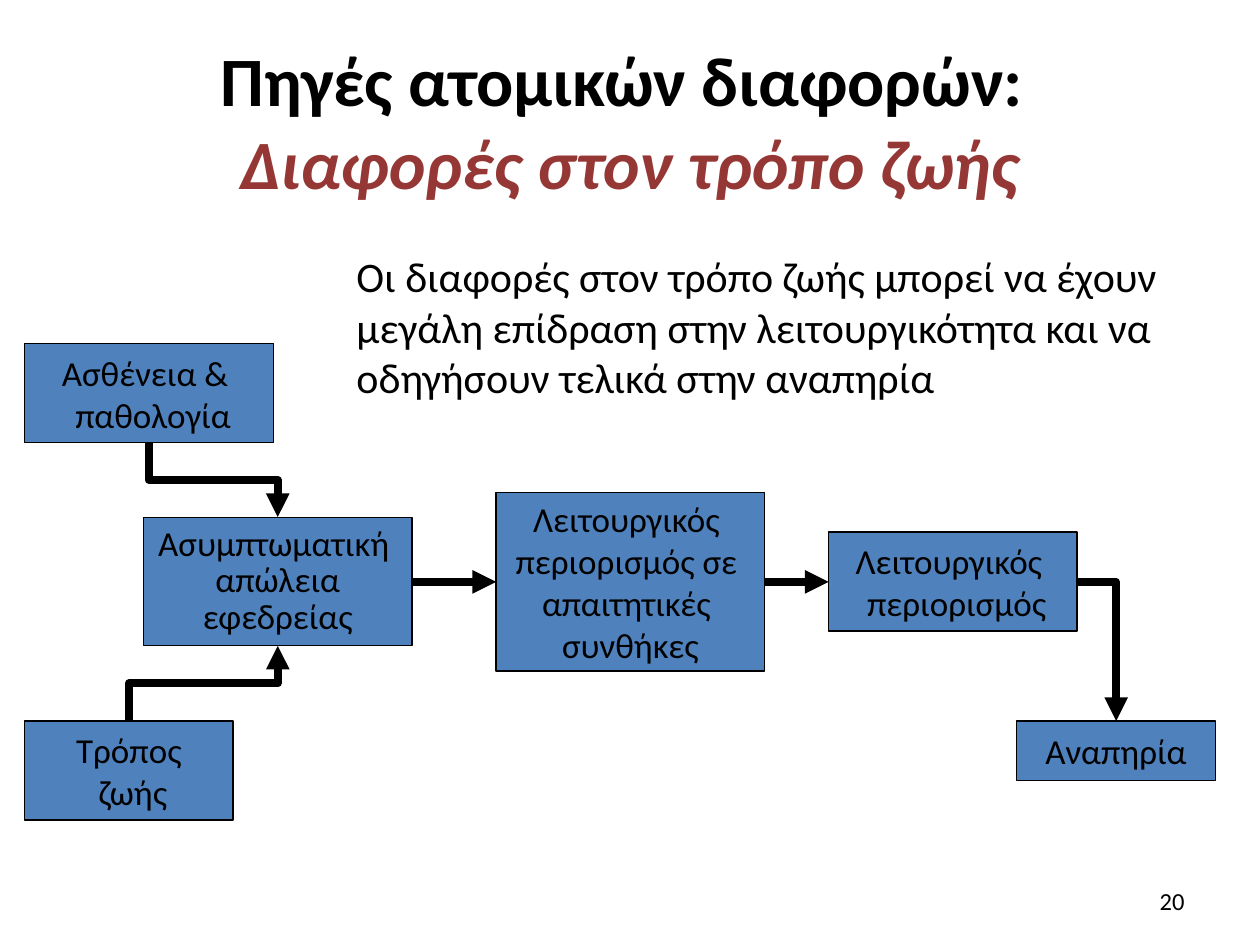
from lxml import etree
from pptx import Presentation
from pptx.dml.color import RGBColor
from pptx.enum import shapes, text
from pptx.oxml.ns import qn
from pptx.util import Pt

BLACK = RGBColor(0x00, 0x00, 0x00)
RED = RGBColor(0x95, 0x37, 0x35)
BLUE = RGBColor(0x4F, 0x81, 0xBD)
FONT = "Calibri"
CENTER = text.PP_ALIGN.CENTER
FLOW_Y = 332.5


def add_text(p, content, size=20, color=BLACK, bold=False, italic=False,
             align=CENTER, spacing=None):
    """Append text to a paragraph, with line feeds as line breaks."""
    for i, line in enumerate(content.split("\n")):
        if i:
            p.add_line_break()
        r = p.add_run()
        r.text = line
        f = r.font
        f.name, f.size, f.bold, f.italic = FONT, Pt(size), bold, italic
        f.color.rgb = color
    p.alignment = align
    if spacing:
        p.line_spacing = Pt(spacing)


def place(sp, left, top, width, height):
    """Set the position and size of a shape."""
    sp.left, sp.top, sp.width, sp.height = map(Pt, (left, top, width, height))


def add_title(sp):
    """Fill the title placeholder with its two lines."""
    place(sp, 36, 21.6, 648, 112.3)
    tf = sp.text_frame
    tf.auto_size = text.MSO_AUTO_SIZE.NONE
    tf.vertical_anchor = text.MSO_ANCHOR.MIDDLE
    tf.margin_bottom = Pt(22)
    p = tf.paragraphs[0]
    add_text(p, "Πηγές ατομικών διαφορών: ", size=39.6, bold=True)
    p.add_line_break()
    add_text(p, "Διαφορές στον τρόπο ζωής", size=39.6, color=RED, bold=True, italic=True)


def add_body(sp):
    """Fill the body placeholder with an indented, unbulleted paragraph."""
    place(sp, 48, 139.7, 648, 350.6)
    tf = sp.text_frame
    tf.auto_size = text.MSO_AUTO_SIZE.NONE
    p = tf.paragraphs[0]
    pPr = p._p.get_or_add_pPr()
    pPr.set("marL", str(Pt(148.5)))
    pPr.set("indent", "0")
    etree.SubElement(pPr, qn("a:buNone"))
    p.space_before = Pt(0)
    add_text(p, "Οι διαφορές στον τρόπο ζωής μπορεί να έχουν μεγάλη επίδραση στην "
                "λειτουργικότητα και να οδηγήσουν τελικά στην αναπηρία",
             size=24, align=text.PP_ALIGN.LEFT)


def add_number(slide, number):
    """Add the slide number at the bottom right."""
    sp = slide.shapes.add_textbox(Pt(516), Pt(500.5), Pt(168), Pt(28.8))
    tf = sp.text_frame
    tf.word_wrap = True
    tf.vertical_anchor = text.MSO_ANCHOR.MIDDLE
    add_text(tf.paragraphs[0], number, size=14, align=text.PP_ALIGN.RIGHT)


def add_box(slide, content, left, top, width, height, spacing=None):
    """Add a blue box with centred text."""
    sp = slide.shapes.add_shape(shapes.MSO_SHAPE.RECTANGLE, Pt(left), Pt(top),
                                Pt(width), Pt(height))
    sp.shadow.inherit = False
    sp.fill.solid()
    sp.fill.fore_color.rgb = BLUE
    sp.line.color.rgb = BLACK
    sp.line.width = Pt(0.75)
    tf = sp.text_frame
    tf.word_wrap = False
    tf.vertical_anchor = text.MSO_ANCHOR.MIDDLE
    add_text(tf.paragraphs[0], content, spacing=spacing)


def add_arrow(slide, x1, y1, x2, y2, kind=shapes.MSO_CONNECTOR.STRAIGHT):
    """Add a thick black connector with a triangular head at its end."""
    c = slide.shapes.add_connector(kind, Pt(x1), Pt(y1), Pt(x2), Pt(y2))
    c.line.color.rgb = BLACK
    c.line.width = Pt(4.5)
    etree.SubElement(c.line._get_or_add_ln(), qn("a:tailEnd"), type="triangle")
    etree.SubElement(c._element.spPr, qn("a:effectLst"))
    return c


def add_vertical_elbow(slide, x1, y1, x2, y2):
    """Add an elbow that leaves and arrives vertically, as a turned connector."""
    cx, cy = (x1 + x2) / 2, (y1 + y2) / 2
    dx, dy = (x2 - x1) / 2, (y2 - y1) / 2
    c = add_arrow(slide, cx + dy, cy - dx, cx - dy, cy + dx, shapes.MSO_CONNECTOR.ELBOW)
    c._element.spPr.find(qn("a:xfrm")).set("rot", str(270 * 60000))


def add_corner(slide, x1, y1, x2, y2):
    """Add a connector that runs across and then down."""
    c = add_arrow(slide, x1, y1, x2, y2, shapes.MSO_CONNECTOR.ELBOW)
    c._element.spPr.find(qn("a:prstGeom")).set("prst", "bentConnector2")


def main():
    """Build the slide and save it."""
    prs = Presentation()
    prs.slide_width, prs.slide_height = Pt(720), Pt(540)
    slide = prs.slides.add_slide(prs.slide_layouts[1])
    add_title(slide.shapes.title)
    add_body(slide.placeholders[1])
    add_number(slide, "20")

    add_box(slide, "Ασυμπτωματική \nαπώλεια\nεφεδρείας", 82, 295.5, 153.5, 73.5, spacing=21)
    add_box(slide, "Λειτουργικός \nπεριορισμός σε \nαπαιτητικές \nσυνθήκες",
            283.5, 281.5, 153.5, 102)
    add_box(slide, "Τρόπος\n ζωής", 14.2, 412, 119, 56.7)
    add_box(slide, "Ασθένεια & \n παθολογία", 14.2, 196.3, 142, 56.7)
    add_box(slide, "Λειτουργικός \n περιορισμός", 473.5, 304, 142, 56.7)
    add_box(slide, "Αναπηρία", 581, 412, 113.5, 34)

    add_vertical_elbow(slide, 85, 253, 158.7, 295.5)
    add_vertical_elbow(slide, 73.7, 412, 158.7, 369)
    add_arrow(slide, 235.5, FLOW_Y, 283.5, FLOW_Y)
    add_arrow(slide, 437, FLOW_Y, 473.5, FLOW_Y)
    add_corner(slide, 615.5, FLOW_Y, 637.8, 412)
    prs.save("out.pptx")


if __name__ == "__main__":
    main()
